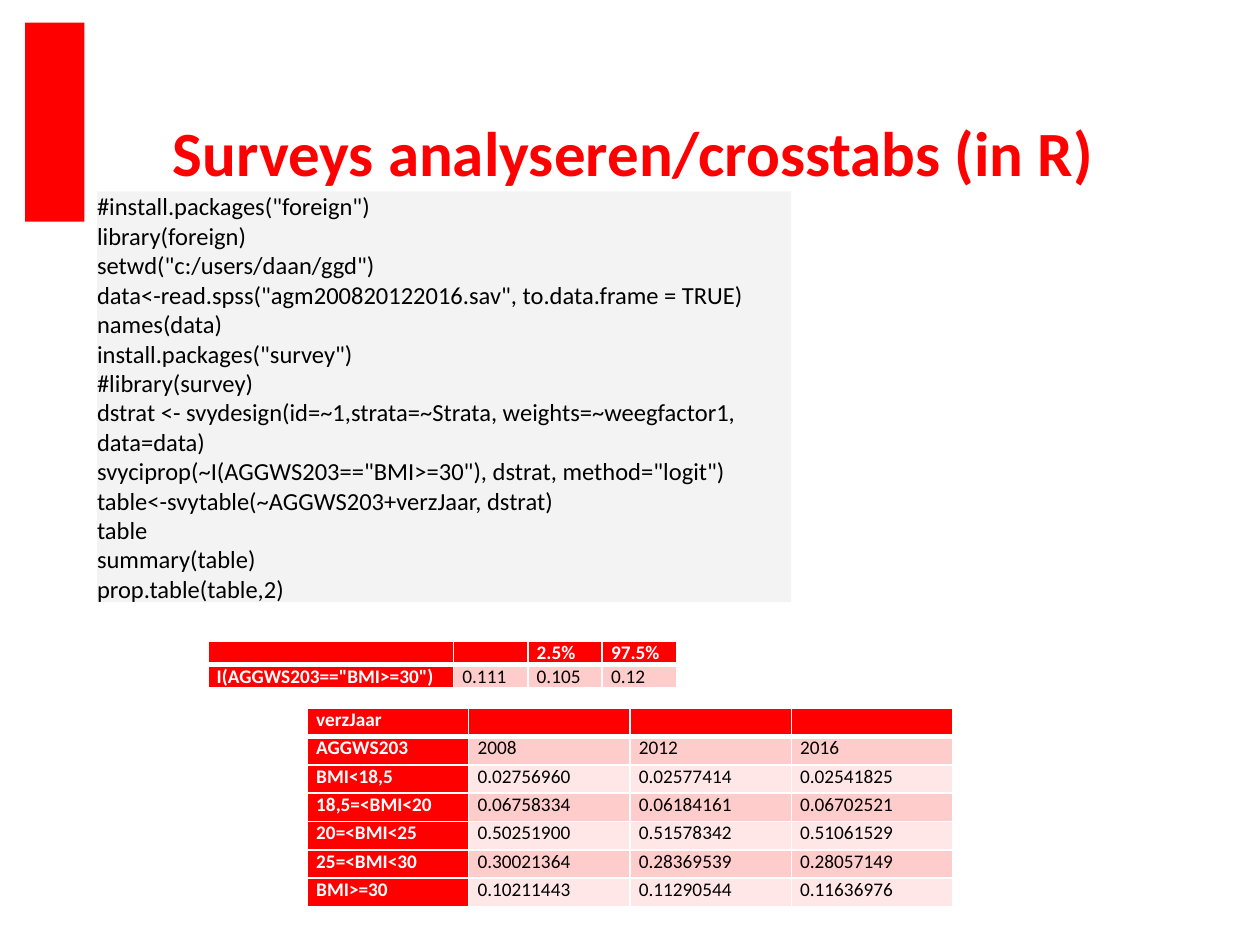
from lxml import etree
from pptx import Presentation
from pptx.dml.color import RGBColor
from pptx.enum.shapes import MSO_SHAPE
from pptx.enum.text import MSO_ANCHOR, PP_ALIGN
from pptx.oxml.ns import qn
from pptx.util import Inches, Pt

RECTANGLE = MSO_SHAPE.RECTANGLE
TOP = MSO_ANCHOR.TOP
LEFT, CENTER = PP_ALIGN.LEFT, PP_ALIGN.CENTER

RED = RGBColor(0xFF, 0x00, 0x00)
BLACK = RGBColor(0x00, 0x00, 0x00)
WHITE = RGBColor(0xFF, 0xFF, 0xFF)
CODE_GREY = RGBColor(0xF2, 0xF2, 0xF2)
BAND_DARK = RGBColor(0xFF, 0xCC, 0xCC)
BAND_LIGHT = RGBColor(0xFF, 0xE7, 0xE7)
FONT = "Calibri"


def write_text(holder, lines, size, color, bold=False, align=LEFT, side=0):
    """Fill a text frame or a table cell; side is its left and right margin."""
    holder.vertical_anchor = TOP
    holder.margin_left = holder.margin_right = Inches(side)
    holder.margin_top = holder.margin_bottom = 0
    holder.text = "\n".join(lines)
    frame = getattr(holder, "text_frame", holder)
    frame.word_wrap = True
    for para in frame.paragraphs:
        para.alignment = align
        for span in para.runs:
            span.font.name = FONT
            span.font.size = Pt(size)
            span.font.bold = bold
            span.font.color.rgb = color


def add_red_table(page, left, top, column_widths, row_height, rows):
    frame = page.shapes.add_table(
        len(rows), len(column_widths), Inches(left), Inches(top),
        Inches(sum(column_widths)), Inches(row_height * len(rows)))
    table = frame.table
    for column, width in zip(table.columns, column_widths):
        column.width = Inches(width)
    for r, values in enumerate(rows):
        table.rows[r].height = Inches(row_height)
        for c, value in enumerate(values):
            cell = table.cell(r, c)
            heading = r == 0 or c == 0
            write_text(cell, [value], 11, WHITE if heading else BLACK,
                       heading, side=0.07)
            # An empty cell needs its text size too, or its row grows
            if not value:
                para = cell.text_frame.paragraphs[0]
                etree.SubElement(para._p, qn("a:endParaRPr"), sz="1100")
            # White borders, thick around the foot of the header row
            properties = cell._tc.get_or_add_tcPr()
            for edge in "LRTB":
                thick = (r == 0 and edge == "B") or (r == 1 and edge == "T")
                line = etree.SubElement(properties, qn("a:ln" + edge),
                                        w=str(Pt(3 if thick else 1)))
                fill = etree.SubElement(line, qn("a:solidFill"))
                etree.SubElement(fill, qn("a:srgbClr"), val=str(WHITE))
            cell.fill.solid()
            band = BAND_DARK if r % 2 else BAND_LIGHT
            cell.fill.fore_color.rgb = RED if heading else band


deck = Presentation()
deck.slide_width, deck.slide_height = Inches(10), Inches(7.5)
page = deck.slides.add_slide(deck.slide_layouts[6])

# Plain red block in the logo's place
block = page.shapes.add_shape(RECTANGLE, Inches(0.2), Inches(0.18),
                              Inches(0.47), Inches(1.58))
block.shadow.inherit = False
block.fill.solid()
block.fill.fore_color.rgb = RED
block.line.fill.background()

# Title
title = page.shapes.add_textbox(Inches(0.87), Inches(0.9),
                                Inches(8.31), Inches(1.25))
write_text(title.text_frame, ["Surveys analyseren/crosstabs (in R)"],
           36, RED, True, CENTER)

# R code on a slightly transparent grey panel
code = [
    '#install.packages("foreign")',
    'library(foreign)',
    'setwd("c:/users/daan/ggd")',
    'data<-read.spss("agm200820122016.sav", to.data.frame = TRUE)',
    'names(data)',
    'install.packages("survey")',
    '#library(survey)',
    'dstrat <- svydesign(id=~1,strata=~Strata, weights=~weegfactor1, data=data)',
    'svyciprop(~I(AGGWS203=="BMI>=30"), dstrat, method="logit")',
    'table<-svytable(~AGGWS203+verzJaar, dstrat)',
    'table',
    'summary(table)',
    'prop.table(table,2)',
]
panel = page.shapes.add_shape(RECTANGLE, Inches(0.77), Inches(1.52),
                              Inches(5.51), Inches(3.26))
panel.shadow.inherit = False
panel.fill.solid()
panel.fill.fore_color.rgb = CODE_GREY
panel_color = panel._element.spPr.find(qn("a:solidFill"))[0]
etree.SubElement(panel_color, qn("a:alpha"), val="87000")
panel.line.fill.background()
write_text(panel.text_frame, code, 14, BLACK)

# Proportions by survey year
add_red_table(page, 2.44, 5.62, [1.28] * 4, 0.225, [
    ["verzJaar", "", "", ""],
    ["AGGWS203", "2008", "2012", "2016"],
    ["BMI<18,5", "0.02756960", "0.02577414", "0.02541825"],
    ["18,5=<BMI<20", "0.06758334", "0.06184161", "0.06702521"],
    ["20=<BMI<25", "0.50251900", "0.51578342", "0.51061529"],
    ["25=<BMI<30", "0.30021364", "0.28369539", "0.28057149"],
    ["BMI>=30", "0.10211443", "0.11290544", "0.11636976"],
])

# Confidence interval
add_red_table(page, 1.65, 5.09, [1.95] + [0.59] * 3, 0.18, [
    ["", "", "2.5%", "97.5%"],
    ['I(AGGWS203=="BMI>=30")', "0.111", "0.105", "0.12"],
])

deck.save("out.pptx")
